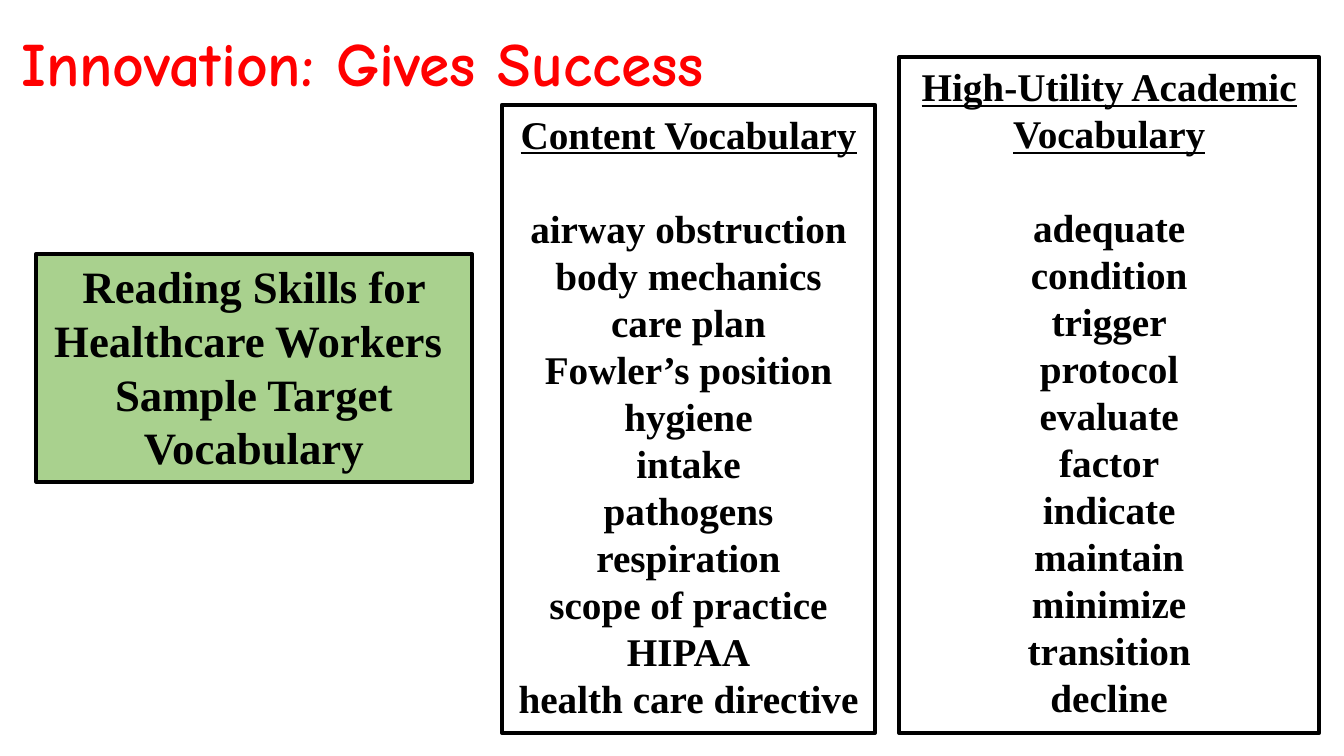
from lxml.etree import SubElement
from pptx import Presentation
from pptx.dml.color import RGBColor
from pptx.enum.shapes import MSO_SHAPE
from pptx.enum.text import MSO_ANCHOR, MSO_AUTO_SIZE, PP_ALIGN
from pptx.oxml.ns import qn
from pptx.util import Pt

COLORS = {"black": "000000", "white": "FFFFFF", "green": "A9D18E", "red": "FF0000"}
SERIF, COMIC = "Times New Roman", "Comic Neue"
LINE_FACTOR = 1.2

CONTENT_WORDS = [
    "airway obstruction", "body mechanics", "care plan", "Fowler’s position",
    "hygiene", "intake", "pathogens", "respiration", "scope of practice",
    "HIPAA", "health care directive",
]
ACADEMIC_WORDS = [
    "adequate", "condition", "trigger", "protocol", "evaluate", "factor",
    "indicate", "maintain", "minimize", "transition", "decline",
]


def color(name):
    return RGBColor.from_string(COLORS[name])


def place(box, left, top, width, height):
    box.left, box.top = Pt(left), Pt(top)
    box.width, box.height = Pt(width), Pt(height)


def prepare_frame(box):
    frame = box.text_frame
    frame.word_wrap = True
    frame.auto_size = MSO_AUTO_SIZE.NONE
    frame.vertical_anchor = MSO_ANCHOR.TOP
    return frame


def frame_box(box, fill):
    box.fill.solid()
    box.fill.fore_color.rgb = color(fill)
    box.line.color.rgb = color("black")
    box.line.width = Pt(3)


def write(para, text, size, font=SERIF, ink="black", underline=False,
          align=PP_ALIGN.CENTER, after=0):
    para.alignment = align
    para.line_spacing = Pt(size * LINE_FACTOR)
    para.space_before, para.space_after = Pt(0), Pt(after)
    span = para.add_run()
    span.text = text
    span.font.name, span.font.size = font, Pt(size)
    span.font.bold, span.font.underline = True, underline
    span.font.color.rgb = color(ink)


def remove_bullet(para):
    properties = para._p.get_or_add_pPr()
    properties.set("marL", "0")
    properties.set("indent", "0")
    SubElement(properties, qn("a:buNone"))


def add_word_list(box, heading, words, bounds, size=28):
    place(box, *bounds)
    frame_box(box, "white")
    frame = prepare_frame(box)
    first = frame.paragraphs[0]
    remove_bullet(first)
    write(first, heading, size, underline=True, after=size * LINE_FACTOR)
    for word in words:
        para = frame.add_paragraph()
        remove_bullet(para)
        write(para, word, size)


def add_topic_box(page, lines, bounds):
    box = page.shapes.add_shape(MSO_SHAPE.RECTANGLE, *map(Pt, bounds))
    box.shadow.inherit = False
    frame_box(box, "green")
    frame = prepare_frame(box)
    for index, line in enumerate(lines):
        para = frame.add_paragraph() if index else frame.paragraphs[0]
        write(para, line, 32)


def main():
    deck = Presentation()
    deck.slide_width, deck.slide_height = Pt(960), Pt(540)
    page = deck.slides.add_slide(deck.slide_layouts.get_by_name("Two Content"))

    # Title
    title = page.shapes.title
    place(title, 7.9, 14.4, 603.4, 60.5)
    write(prepare_frame(title).paragraphs[0], "Innovation: Gives Success", 44,
          font=COMIC, ink="red", align=PP_ALIGN.LEFT)

    # Vocabulary lists
    add_word_list(page.placeholders[1], "Content Vocabulary", CONTENT_WORDS,
                  (358.6, 74.9, 266.4, 448.6))
    add_word_list(page.placeholders[2], "High-Utility Academic Vocabulary",
                  ACADEMIC_WORDS, (642.2, 41, 300.2, 482.4))

    # Topic box
    add_topic_box(page, ["Reading Skills for Healthcare Workers ",
                         "Sample Target Vocabulary"], (25.9, 181.4, 311, 162.7))

    deck.save("out.pptx")


if __name__ == "__main__":
    main()
